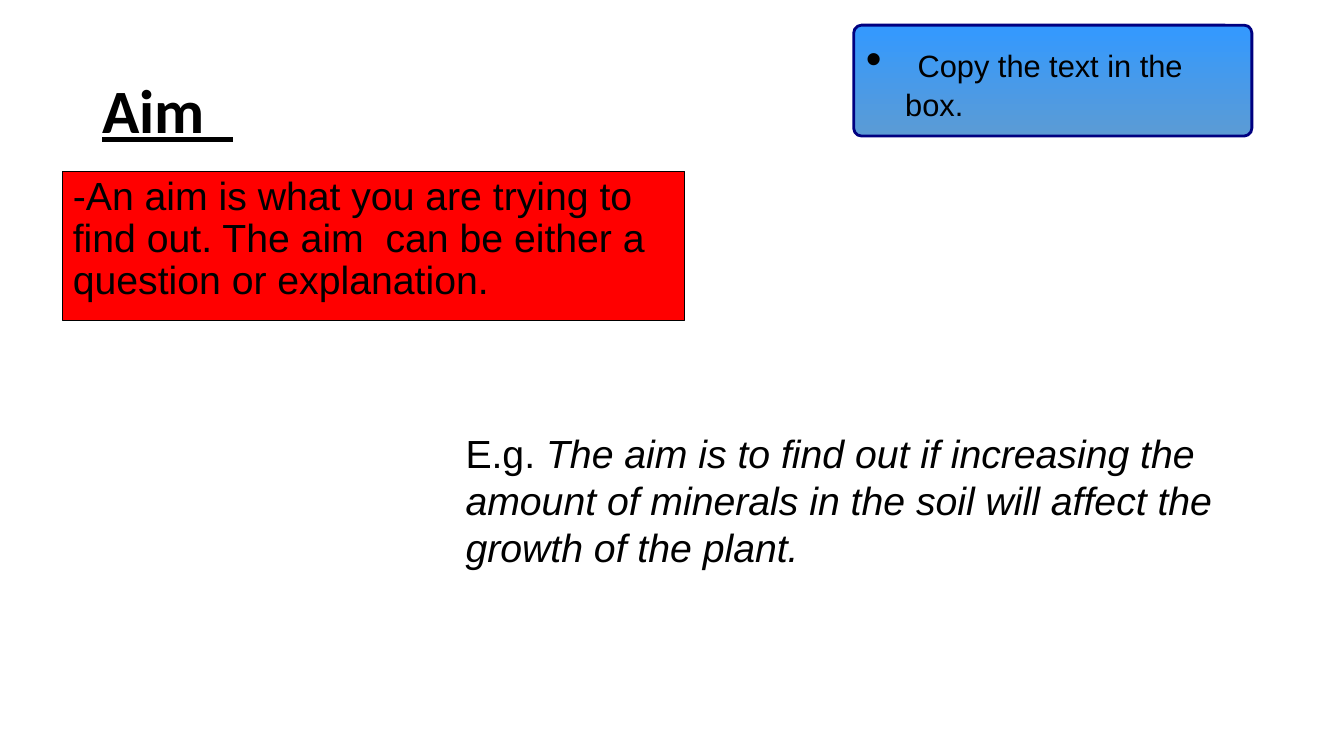
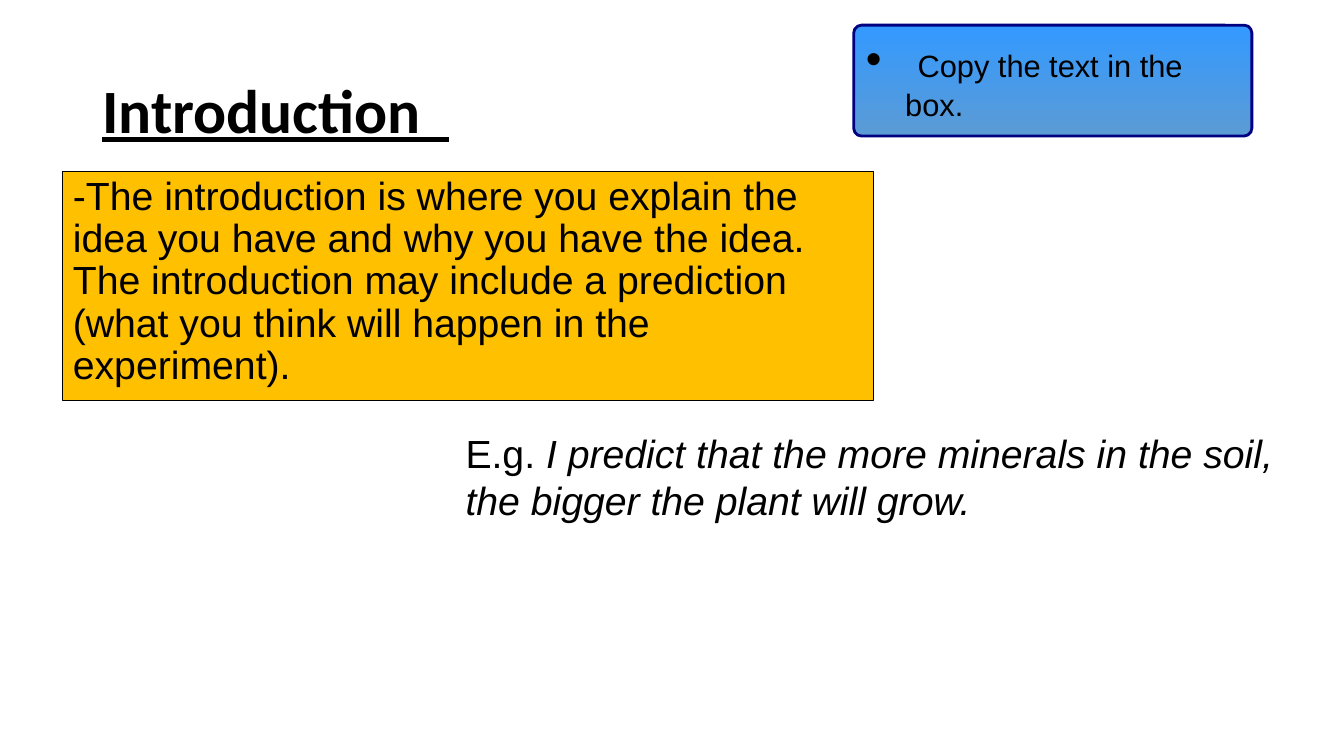
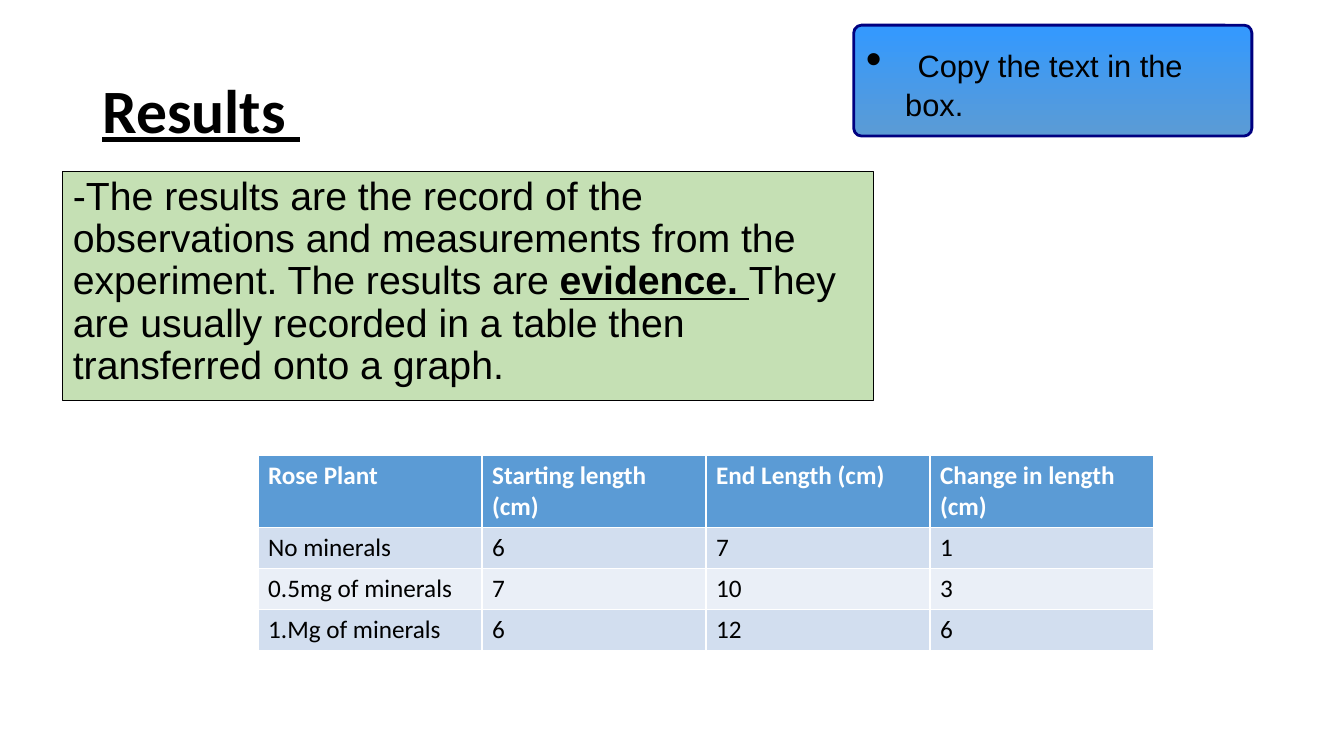
from pptx import Presentation
from pptx import util as u
from pptx.dml.color import RGBColor
from pptx.enum import shapes, text
from pptx.oxml import parse_xml
from pptx.oxml.ns import nsdecls

BLACK = RGBColor(0x00, 0x00, 0x00)
WHITE = RGBColor(0xFF, 0xFF, 0xFF)
RED = RGBColor(0xFF, 0x00, 0x00)
AMBER = RGBColor(0xFF, 0xC0, 0x00)
GREEN = RGBColor(0xC5, 0xE0, 0xB4)
NAVY = RGBColor(0x00, 0x00, 0x80)
BRIGHT_BLUE = RGBColor(0x33, 0x99, 0xFF)
BLUE = RGBColor(0x5B, 0x9B, 0xD5)
BANDS = [RGBColor(0xEA, 0xEF, 0xF7), RGBColor(0xD2, 0xDE, 0xEF)]

# Slide size and a grid of 160 columns by 90 rows
presentation = Presentation()
presentation.slide_width = u.Inches(13.33)
presentation.slide_height = u.Inches(7.5)
COLUMN = presentation.slide_width / 160
ROW = presentation.slide_height / 90
TITLE_ONLY = presentation.slide_layouts[5]


def grid(left, top, width, height):
    """Turn columns and rows into lengths."""
    return [int(n * unit) for n, unit in zip((left, top, width, height), (COLUMN, ROW) * 2)]


def write(frame, *runs, size=28, font="Arial", color=BLACK, anchor=text.MSO_ANCHOR.TOP,
          line_spacing=None, space_before=0):
    """Fill a frame with one paragraph; each run is a string or (string, font settings)."""
    frame.word_wrap = True
    frame.auto_size = text.MSO_AUTO_SIZE.NONE
    frame.vertical_anchor = anchor
    paragraph = frame.paragraphs[0]
    paragraph.alignment = text.PP_ALIGN.LEFT
    paragraph.line_spacing = line_spacing
    paragraph.space_before = u.Pt(space_before)
    for item in runs:
        words, settings = (item, {}) if isinstance(item, str) else item
        run = paragraph.add_run()
        run.text = words
        run.font.name, run.font.size = font, u.Pt(size)
        run.font.color.rgb = color
        for name, value in settings.items():
            setattr(run.font, name, value)
    return paragraph


# Title, box colour, box width and height, definition, example
sections = [
    ("Aim  ", RED, 74.04, 17.76,
     ["-An aim is what you are trying to find out. The aim  can be either a question "
      "or explanation."],
     "The aim is to find out if increasing the amount of minerals in the soil will "
     "affect the growth of the plant."),
    ("Introduction  ", AMBER, 96.48, 27.24,
     ["-The introduction is where you explain the idea you have and why you have the idea. "
      "The introduction may include a prediction (what you think will happen in the "
      "experiment)."],
     "I predict that the more minerals in the soil, the bigger the plant will grow."),
    ("Results ", GREEN, 96.48, 27.24,
     ["-The results are the record of the observations and measurements from the "
      "experiment. The results are ",
      ("evidence. ", {"bold": True, "underline": True}),
      "They are usually recorded in a table then transferred onto a graph."],
     None),
]

for title, fill, width, height, definition, example in sections:
    slide = presentation.slides.add_slide(TITLE_ONLY)

    # Title
    heading = slide.shapes.title
    heading.left, heading.top, heading.width, heading.height = grid(11, 4.8, 138, 17.4)
    write(heading.text_frame, (title, {"bold": True, "underline": True}), size=44,
          font="Calibri", anchor=text.MSO_ANCHOR.MIDDLE, line_spacing=0.9)

    # Definition box
    box = slide.shapes.add_shape(shapes.MSO_SHAPE.RECTANGLE, *grid(7.5, 20.4, width, height))
    box.shadow.inherit = False
    box.fill.solid()
    box.fill.fore_color.rgb = fill
    box.line.color.rgb = BLACK
    box.line.width = u.Pt(0.75)
    write(box.text_frame, *definition, line_spacing=0.9, space_before=10)

    # Instruction badge
    badge = slide.shapes.add_shape(shapes.MSO_SHAPE.ROUNDED_RECTANGLE,
                                   *grid(101.64, 3, 47.4, 13.2))
    badge.adjustments[0] = 0.07
    badge.shadow.inherit = False
    badge.fill.gradient()
    badge.fill.gradient_angle = 270
    for stop, color, position in zip(badge.fill.gradient_stops, (BRIGHT_BLUE, BLUE), (0, 1)):
        stop.color.rgb = color
        stop.position = position
    badge.line.color.rgb = NAVY
    badge.line.width = u.Pt(2)
    instruction = write(badge.text_frame, (" ", {"size": u.Pt(32), "bold": True}),
                        "Copy the text in the box.", size=22)
    properties = instruction._p.get_or_add_pPr()
    properties.set("marL", str(u.Inches(0.39)))
    properties.set("indent", str(-u.Inches(0.39)))
    properties.append(parse_xml(f'<a:buFont {nsdecls("a")} typeface="Arial"/>'))
    properties.append(parse_xml(f'<a:buChar {nsdecls("a")} char="•"/>'))

    # Example
    if example:
        note = slide.shapes.add_textbox(*grid(54.24, 50.52, 99.48, 18))
        write(note.text_frame, "E.g. ", (example, {"italic": True}))

# Table of results on the last slide
measurements = [
    ("Rose Plant", "Starting length (cm)", "End Length (cm)", "Change in length (cm)"),
    ("No minerals", "6", "7", "1"),
    ("0.5mg of minerals", "7", "10", "3"),
    ("1.Mg of minerals", "6", "12", "6"),
]
table = slide.shapes.add_table(len(measurements), len(measurements[0]),
                               *grid(30.72, 54.24, 106.68, 23.04)).table
for index, values in enumerate(measurements):
    header = index == 0
    table.rows[index].height = int(ROW * (8.3 if header else 4.88))
    for cell, value in zip(table.rows[index].cells, values):
        cell.fill.solid()
        cell.fill.fore_color.rgb = BLUE if header else BANDS[index % 2]
        write(cell.text_frame, (value, {"bold": header}), size=18, font="Calibri",
              color=WHITE if header else BLACK)

presentation.save("out.pptx")
